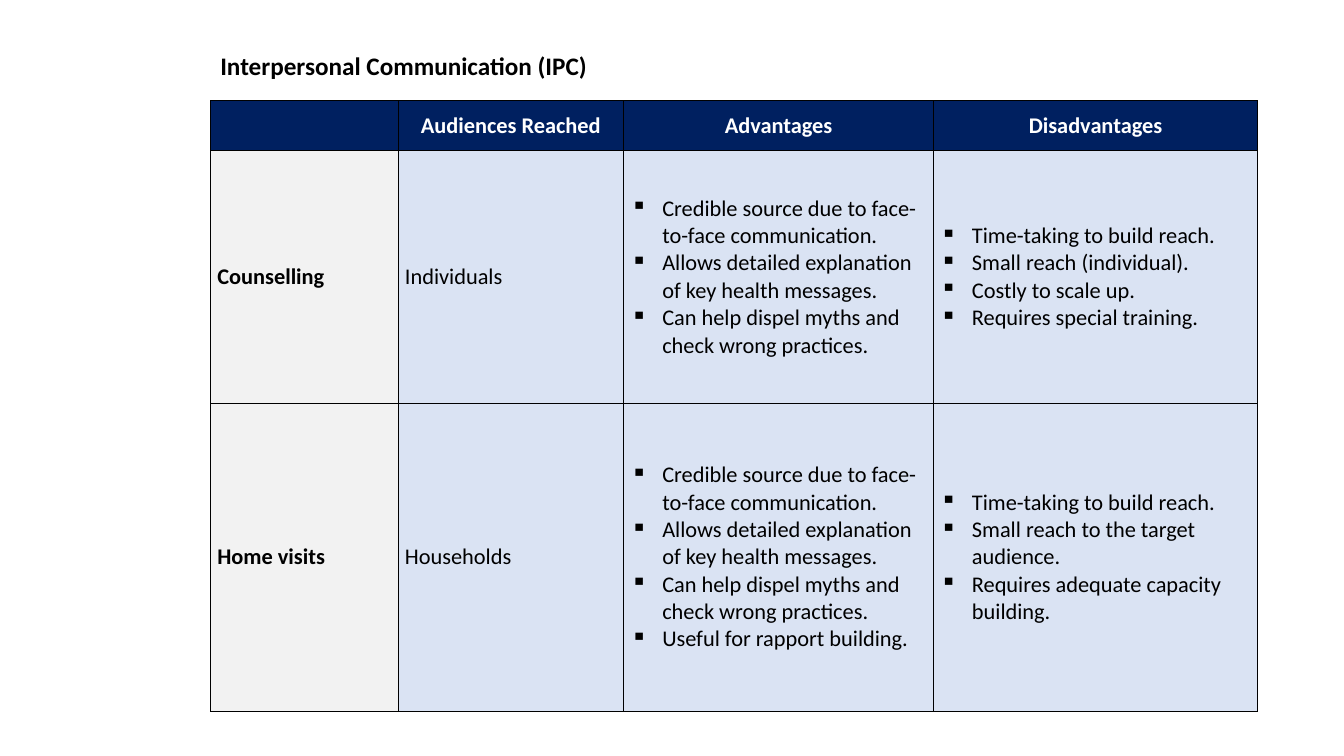
from lxml import etree
from pptx import Presentation
from pptx.dml.color import RGBColor
from pptx.enum.text import MSO_ANCHOR, PP_ALIGN
from pptx.oxml.ns import qn
from pptx.util import Pt

MIDDLE = MSO_ANCHOR.MIDDLE
LEFT, CENTER = PP_ALIGN.LEFT, PP_ALIGN.CENTER

FONT = "Calibri"
BLACK, WHITE = "000000", "FFFFFF"
NAVY, GREY, PALE_BLUE = "002060", "F2F2F2", "DAE3F3"
BULLET_INDENT = 22.5

COLUMN_WIDTHS = [134, 161.3, 221.2, 231.7]
ROW_HEIGHTS = [35.5, 180.7, 219.6]
HEADINGS = ["", "Audiences Reached", "Advantages", "Disadvantages"]
SHARED_ADVANTAGES = [
    "Credible source due to face-to-face communication.",
    "Allows detailed explanation of key health messages.",
    "Can help dispel myths and check wrong practices.",
]
METHODS = [
    ("Counselling", "Individuals", SHARED_ADVANTAGES, [
        "Time-taking to build reach.",
        "Small reach (individual).",
        "Costly to scale up.",
        "Requires special training.",
    ]),
    ("Home visits", "Households",
     SHARED_ADVANTAGES + ["Useful for rapport building."], [
         "Time-taking to build reach.",
         "Small reach to the target audience.",
         "Requires adequate capacity building.",
     ]),
]


def rgb(value):
    return RGBColor.from_string(value)


def add_run(paragraph, text, size, color, bold):
    run = paragraph.add_run()
    run.text = text
    run.font.name = FONT
    run.font.size = Pt(size)
    run.font.bold = bold
    run.font.color.rgb = rgb(color)


def add_bullet(paragraph):
    properties = paragraph._p.get_or_add_pPr()
    properties.set("marL", str(Pt(BULLET_INDENT)))
    properties.set("indent", str(-Pt(BULLET_INDENT)))
    etree.SubElement(properties, qn("a:buChar"), char="▪")


def add_borders(cell):
    properties = cell._tc.get_or_add_tcPr()
    for side in ("a:lnL", "a:lnR", "a:lnT", "a:lnB"):
        line = etree.SubElement(properties, qn(side), w=str(Pt(0.5)))
        line_fill = etree.SubElement(line, qn("a:solidFill"))
        etree.SubElement(line_fill, qn("a:srgbClr"), val=BLACK)


def fill_cell(cell, lines, fill, margins, color=BLACK, bold=False,
              align=LEFT, bulleted=False):
    add_borders(cell)
    cell.fill.solid()
    cell.fill.fore_color.rgb = rgb(fill)
    cell.vertical_anchor = MIDDLE
    side, edge = margins
    cell.margin_left = cell.margin_right = Pt(side)
    cell.margin_top = cell.margin_bottom = Pt(edge)
    for index, text in enumerate(lines):
        frame = cell.text_frame
        paragraph = frame.add_paragraph() if index else frame.paragraphs[0]
        paragraph.alignment = align
        if bulleted:
            add_bullet(paragraph)
        if text:
            add_run(paragraph, text, 16, color, bold)


def add_title(slide, left, top, width, height):
    title = slide.shapes.add_textbox(Pt(left), Pt(top), Pt(width), Pt(height))
    title.text_frame.word_wrap = False
    add_run(title.text_frame.paragraphs[0],
            "Interpersonal Communication (IPC)", 18, BLACK, True)


def add_comparison(slide, left, top):
    table = slide.shapes.add_table(
        len(ROW_HEIGHTS), len(COLUMN_WIDTHS), Pt(left), Pt(top),
        Pt(sum(COLUMN_WIDTHS)), Pt(sum(ROW_HEIGHTS))).table
    table.horz_banding = False
    for column, width in zip(table.columns, COLUMN_WIDTHS):
        column.width = Pt(width)
    for row, height in zip(table.rows, ROW_HEIGHTS):
        row.height = Pt(height)

    for index, heading in enumerate(HEADINGS):
        fill_cell(table.cell(0, index), [heading], NAVY, (2.25, 0.75),
                  color=WHITE, bold=True, align=CENTER)
    body_margins = (5, 2.5)
    for row, (method, audience, advantages, disadvantages) in enumerate(METHODS, 1):
        fill_cell(table.cell(row, 0), [method], GREY, body_margins, bold=True)
        fill_cell(table.cell(row, 1), [audience], PALE_BLUE, body_margins)
        for column, points in enumerate((advantages, disadvantages), 2):
            fill_cell(table.cell(row, column), points, PALE_BLUE,
                      body_margins, bulleted=True)


def main():
    presentation = Presentation()
    presentation.slide_width = Pt(960)
    presentation.slide_height = Pt(540)
    slide = presentation.slides.add_slide(presentation.slide_layouts[6])
    add_comparison(slide, 150.3, 72)
    add_title(slide, 150.3, 32.5, 278.6, 29)
    presentation.save("out.pptx")


if __name__ == "__main__":
    main()
